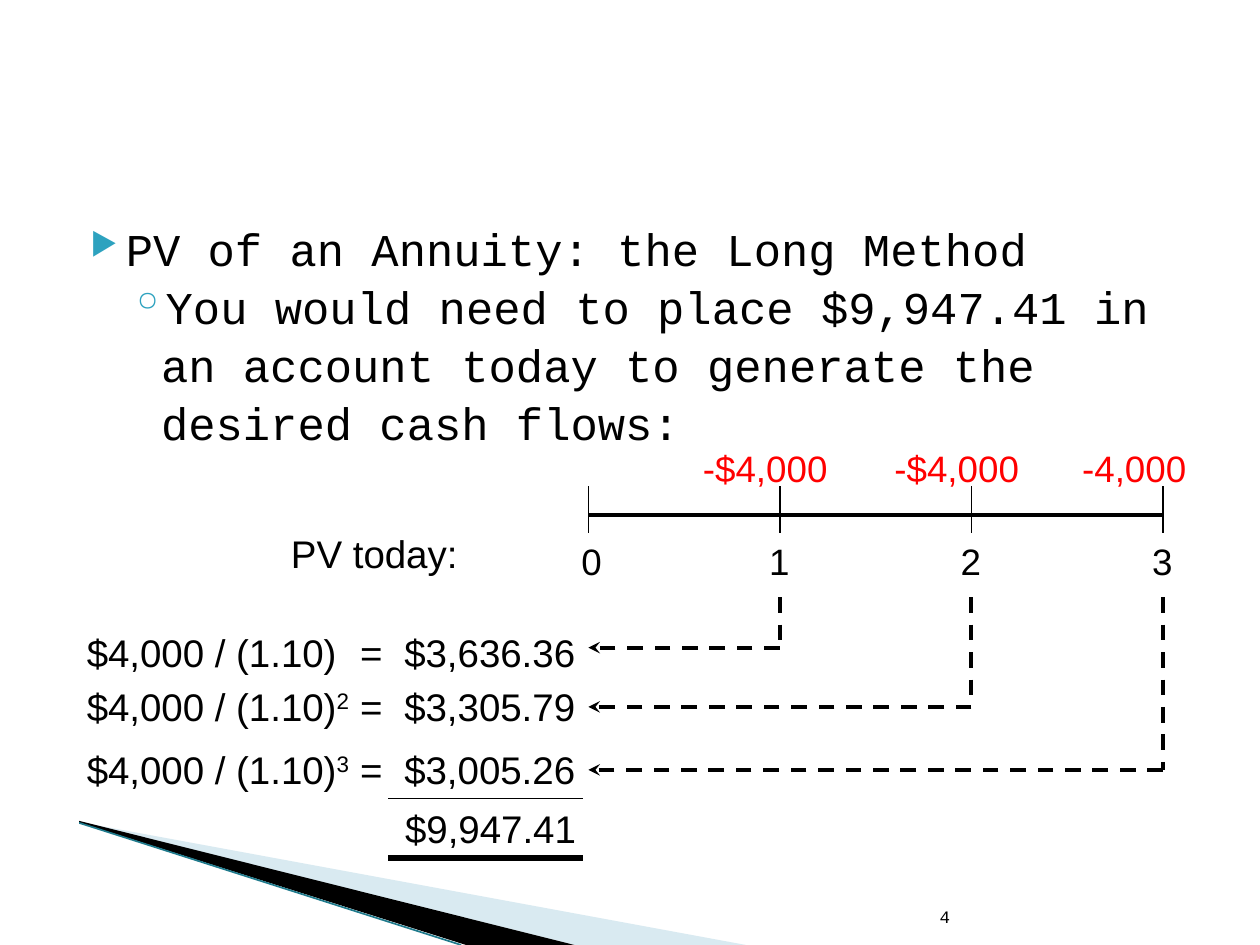
from lxml import etree
from pptx import Presentation
from pptx.dml.color import RGBColor
from pptx.enum.dml import MSO_LINE
from pptx.enum.shapes import MSO_CONNECTOR, MSO_SHAPE
from pptx.enum.text import MSO_ANCHOR, PP_ALIGN
from pptx.oxml.ns import qn
from pptx.util import Inches, Pt

STRAIGHT = MSO_CONNECTOR.STRAIGHT
RECT = MSO_SHAPE.RECTANGLE
DASH = MSO_LINE.DASH
LEFT, CENTER, RIGHT = PP_ALIGN.LEFT, PP_ALIGN.CENTER, PP_ALIGN.RIGHT
BOTTOM = MSO_ANCHOR.BOTTOM

C = {"black": "000000", "white": "FFFFFF", "red": "FF0000",
     "pale": "A0CBDC", "teal": "1F7A8C", "bullet": "2DA2BF"}


def add_text(left, top, width, height, paras, size, font="Arial", color="black", align=LEFT):
    sp = s.shapes.add_textbox(Inches(left), Inches(top), Inches(width), Inches(height))
    tf = sp.text_frame
    for key, value in {"word_wrap": True, "margin_left": Inches(0.1), "margin_right": Inches(0.1),
                       "margin_top": Inches(0.05), "margin_bottom": Inches(0.05)}.items():
        setattr(tf, key, value)
    for i, runs in enumerate(paras):
        p = tf.add_paragraph() if i else tf.paragraphs[0]
        p.alignment = align
        for text, baseline in runs:
            r = p.add_run()
            r.text = text
            for key, value in {"size": Pt(size), "name": font}.items():
                setattr(r.font, key, value)
            r.font.color.rgb = RGBColor.from_string(C[color])
            if baseline:
                r.font._element.set("baseline", baseline)
    return tf


def add_line(x1, y1, x2, y2, width, color="black", dash=None, arrow=False):
    ln = s.shapes.add_connector(STRAIGHT, Inches(x1), Inches(y1), Inches(x2), Inches(y2))
    ln.line.color.rgb = RGBColor.from_string(C[color])
    ln.line.width = Pt(width)
    if dash:
        ln.line.dash_style = dash
    if arrow:
        etree.SubElement(ln.line._get_or_add_ln(), qn("a:tailEnd"), type="stealth")
    etree.SubElement(ln._element.spPr, qn("a:effectLst"))


prs = Presentation()
prs.slide_width, prs.slide_height = Inches(10), Inches(7.5)
s = prs.slides.add_slide(prs.slide_layouts[6])

wedges = [
    ("pale", [(0.55, 6.51), (5.92, 7.5), (4.56, 7.5), (0.55, 6.5)]),
    ("black", [(0.53, 6.49), (4.56, 7.5), (3.7, 7.5), (0.54, 6.5)]),
]
for color, points in wedges:
    corners = [(Inches(x), Inches(y)) for x, y in points]
    fb = s.shapes.build_freeform(*corners[0])
    fb.add_line_segments(corners[1:])
    sp = fb.convert_to_shape()
    sp.shadow.inherit = False
    sp.fill.solid()
    sp.fill.fore_color.rgb = RGBColor.from_string(C[color])
    sp.line.fill.background()
    if color == "pale":
        clr = sp._element.spPr.find(qn("a:solidFill")).find(qn("a:srgbClr"))
        etree.SubElement(clr, qn("a:alpha"), val="40000")
add_line(0, 6.33, 3.66, 7.5, 0.95, "teal")

margin = s.shapes.add_shape(RECT, 0, 0, Inches(0.62), Inches(7.48))
margin.shadow.inherit = False
margin.fill.solid()
margin.fill.fore_color.rgb = RGBColor.from_string(C["white"])
margin.line.color.rgb = RGBColor.from_string(C["white"])
margin.line.width = Pt(0.75)

tf = add_text(7.36, 7.01, 2.1, 0.4, [[("4", None)]], 10, "Courier New")
tf.vertical_anchor = BOTTOM

body = [
    [("PV of an Annuity: the Long Method", None)],
    [("You would need to place $9,947.41 in an account today to generate the desired cash flows:", None)],
]
tf = add_text(0.5, 1.68, 9, 4.89, body, 26, "Courier New")
bullets = [("▶", 0.4, 0.28, "68000"), ("◦", 0.68, 0.25, "100000")]
for level, (p, (char, indent, hang, size)) in enumerate(zip(tf.paragraphs, bullets)):
    p.level = level
    p.line_spacing = 1.06
    pPr = p._p.get_or_add_pPr()
    pPr.set("marL", str(Inches(indent)))
    pPr.set("indent", str(-Inches(hang)))
    clr = etree.SubElement(pPr, qn("a:buClr"))
    etree.SubElement(clr, qn("a:srgbClr"), val=C["bullet"])
    etree.SubElement(pPr, qn("a:buSzPct"), val=size)
    etree.SubElement(pPr, qn("a:buChar"), char=char)

ticks = [4.67 + 1.52 * i for i in range(4)]
add_line(ticks[0], 4.09, ticks[-1], 4.09, 2.25)
for year, x in enumerate(ticks):
    add_line(x, 3.86, x, 4.23, 0.75)
    shift = 0.24 if year else 0.21
    add_text(x - shift, 4.23, 0.47, 0.45, [[(str(year), None)]], 21, align=CENTER)
for left, width, flow in [(5.48, 1.42, "-$4,000"), (7, 1.52, "-$4,000"), (8.49, 1.11, "-4,000")]:
    add_text(left, 3.49, width, 0.45, [[(flow, None)]], 21, color="red")

add_text(1.27, 4.16, 2.46, 0.47, [[("PV today:", None)]], 22, align=RIGHT)
discounts = [(4.94, 5.14, None, "$3,636.36"), (5.37, 5.61, "2", "$3,305.79"),
             (5.87, 6.11, "3", "$3,005.26")]
for x, (top, y, power, value) in zip(ticks[1:], discounts):
    runs = [("$4,000 / (1.10)", None)]
    if power:
        runs.append((power, "30000"))
    runs.append((f"\t=\t{value}", None))
    tf = add_text(0.59, top, 4.09, 0.47, [runs], 22)
    tabs = etree.SubElement(tf.paragraphs[0]._p.get_or_add_pPr(), qn("a:tabLst"))
    for pos in (2.17, 2.52):
        etree.SubElement(tabs, qn("a:tab"), pos=str(Inches(pos)), algn="l")
    add_line(x, 4.74, x, y, 2.25, dash=DASH)
    add_line(x, y, ticks[0], y, 2.25, dash=DASH, arrow=True)

add_text(2.82, 6.34, 1.85, 0.47, [[("$9,947.41", None)]], 22, align=RIGHT)
for y, width in [(6.34, 0.75), (6.81, 3)]:
    add_line(3.08, y, 4.63, y, width)

prs.save("out.pptx")
